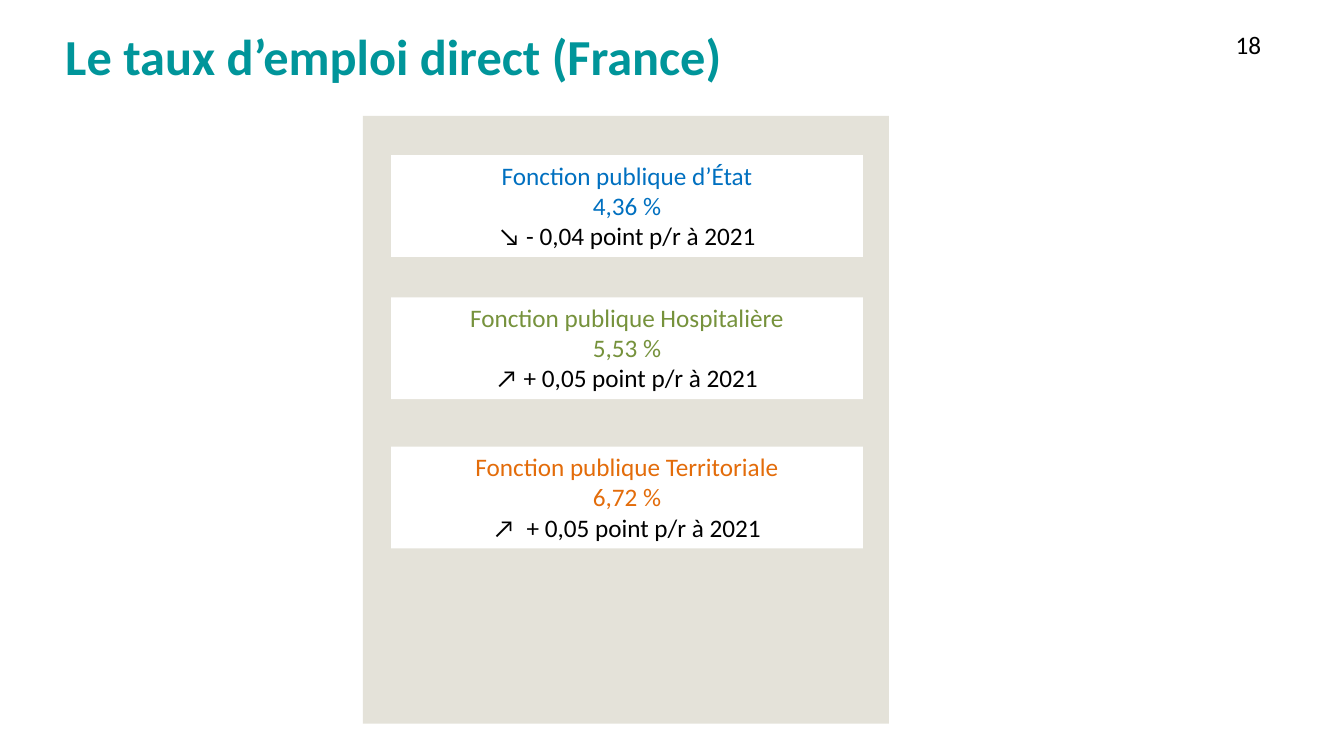
from dataclasses import dataclass

from pptx import Presentation, util as u
from pptx.dml.color import RGBColor
from pptx.enum import shapes, text

COLOURS = {
    "title": "00959A", "panel": "E4E2D9", "card": "FFFFFF", "black": "000000",
    "state": "0070C0", "hospital": "76923C", "local": "E36C0A",
}
WIDTH, HEIGHT = u.Inches(13.333), u.Inches(7.5)


@dataclass(frozen=True)
class Area:
    """Position and size in percent of the slide."""
    left: float
    top: float
    width: float
    height: float

    def lengths(self) -> tuple[int, int, int, int]:
        return (int(WIDTH * self.left / 100), int(HEIGHT * self.top / 100),
                int(WIDTH * self.width / 100), int(HEIGHT * self.height / 100))


@dataclass(frozen=True)
class Sector:
    name: str
    rate: str
    change: str
    colour: str
    top: float


SECTORS = [
    Sector("Fonction publique d’État", "4,36 %",
           "↘ - 0,04 point p/r à 2021", "state", 20.53),
    Sector("Fonction publique Hospitalière", "5,53 %",
           "↗ + 0,05 point p/r à 2021", "hospital", 39.33),
    Sector("Fonction publique Territoriale", "6,72 %",
           "↗  + 0,05 point p/r à 2021", "local", 59.07),
]


def add_span(para, words: str, colour: str, size: int = 18, bold: bool = False) -> None:
    span = para.add_run()
    span.text = words
    formats = {"name": "Calibri", "size": u.Pt(size), "bold": bold}
    for key, value in formats.items():
        setattr(span.font, key, value)
    span.font.color.rgb = RGBColor.from_string(COLOURS[colour])


def add_label(page, area: Area, words: str, colour: str, size: int = 18,
              bold: bool = False, margin_top: float = 0.05) -> None:
    frame = page.shapes.add_textbox(*area.lengths()).text_frame
    formats = {"word_wrap": True, "margin_top": u.Inches(margin_top),
               "vertical_anchor": text.MSO_ANCHOR.TOP}
    for key, value in formats.items():
        setattr(frame, key, value)
    add_span(frame.paragraphs[0], words, colour, size, bold)


def add_block(page, area: Area, colour: str):
    box = page.shapes.add_shape(shapes.MSO_SHAPE.RECTANGLE, *area.lengths())
    box.shadow.inherit = False
    box.fill.solid()
    box.fill.fore_color.rgb = RGBColor.from_string(COLOURS[colour])
    box.line.fill.background()
    return box


def add_card(page, sector: Sector) -> None:
    frame = add_block(page, Area(29.1, sector.top, 35.1, 13.47), "card").text_frame
    formats = {"word_wrap": True, "vertical_anchor": text.MSO_ANCHOR.TOP}
    for key, value in formats.items():
        setattr(frame, key, value)
    name_para, figures_para = frame.paragraphs[0], frame.add_paragraph()
    for para in (name_para, figures_para):
        para.alignment = text.PP_ALIGN.CENTER
    add_span(name_para, sector.name, sector.colour)
    add_span(figures_para, sector.rate, sector.colour)
    figures_para.add_line_break()
    add_span(figures_para, sector.change, "black")


def main() -> None:
    deck = Presentation()
    deck.slide_width, deck.slide_height = WIDTH, HEIGHT
    page = deck.slides.add_slide(deck.slide_layouts[6])

    # Page number and title
    add_label(page, Area(91.2, 3.2, 5.55, 5.33), "18", "black")
    add_label(page, Area(4.12, 1.07, 82.13, 14.27), "Le taux d’emploi direct (France)",
              "title", size=36, bold=True, margin_top=0.17)

    # Panel with one card per sector
    add_block(page, Area(27, 15.33, 39.15, 80.4), "panel")
    for sector in SECTORS:
        add_card(page, sector)

    deck.save("out.pptx")


if __name__ == "__main__":
    main()
